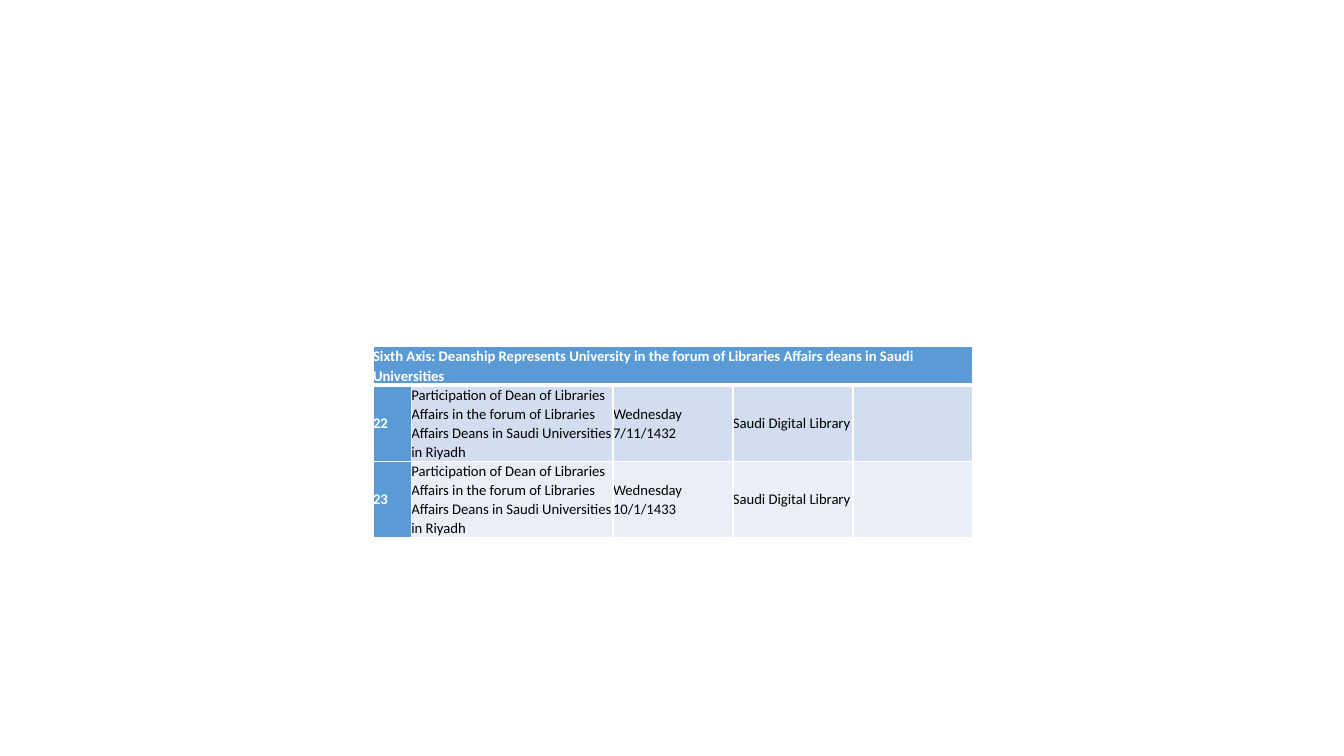
from lxml import etree
from pptx import Presentation
from pptx import util as u
from pptx.dml.color import RGBColor
from pptx.enum import text
from pptx.oxml.ns import qn

WHITE, BLACK, BLUE = "FFFFFF", "000000", "5B9BD5"
BANDS = ["D2DEEF", "EAEFF7"]
TITLE = ("Sixth Axis: Deanship Represents University in the forum of "
         "Libraries Affairs deans in Saudi Universities")
EVENT = ("Participation of Dean of Libraries Affairs in the forum of "
         "Libraries Affairs Deans in Saudi Universities in Riyadh")
PLACE = "Saudi Digital Library"
ROWS = [
    ["22", EVENT, "Wednesday 7/11/1432", PLACE, ""],
    ["23", EVENT, "Wednesday 10/1/1433", PLACE, ""],
]
WIDTHS = [0.38, 2, 1.19, 1.19, 1.19]
HEIGHTS = [0.37, 0.74, 0.74]


def color(code):
    return RGBColor.from_string(code)


def edge(cell, base=1):
    """Draw white borders; base is the width of the bottom one in points."""
    props = cell._tc.get_or_add_tcPr()
    for spot, side in enumerate("LRTB"):
        size = base if side == "B" else 1
        line = etree.Element(qn(f"a:ln{side}"), w=str(u.Pt(size)))
        fill = etree.SubElement(line, qn("a:solidFill"))
        etree.SubElement(fill, qn("a:srgbClr"), val=WHITE)
        props.insert(spot, line)


def write(cell, words, fill, ink, bold):
    cell.fill.solid()
    cell.fill.fore_color.rgb = color(fill)
    if not words:
        return
    cell.vertical_anchor = text.MSO_ANCHOR.MIDDLE
    cell.margin_left = cell.margin_right = 0
    cell.margin_top = cell.margin_bottom = 0
    para = cell.text_frame.paragraphs[0]
    para.line_spacing = 1.07
    para.space_after = u.Pt(8)
    run = para.add_run()
    run.text = words
    run.font.name = "Calibri"
    run.font.size = u.Pt(10.5)
    run.font.bold = bold
    run.font.color.rgb = color(ink)


def agenda(slide, left, top, width, height):
    frame = slide.shapes.add_table(
        len(HEIGHTS), len(WIDTHS), u.Inches(left), u.Inches(top),
        u.Inches(width), u.Inches(height))
    table = frame.table
    for col, size in zip(table.columns, WIDTHS):
        col.width = u.Inches(width * size / sum(WIDTHS))
    for row, size in zip(table.rows, HEIGHTS):
        row.height = u.Inches(height * size / sum(HEIGHTS))

    # Heading across all columns
    head = table.cell(0, 0)
    head.merge(table.cell(0, len(WIDTHS) - 1))
    write(head, TITLE, BLUE, WHITE, True)
    for col in range(len(WIDTHS)):
        edge(table.cell(0, col), 3)

    # Numbered events in banded rows
    for r, (items, band) in enumerate(zip(ROWS, BANDS), 1):
        for c, words in enumerate(items):
            cell = table.cell(r, c)
            first = c == 0
            write(cell, words, BLUE if first else band,
                  WHITE if first else BLACK, first)
            edge(cell)


def main():
    deck = Presentation()
    deck.slide_width = u.Inches(13.33)
    deck.slide_height = u.Inches(7.5)
    slide = deck.slides.add_slide(deck.slide_layouts[6])
    agenda(slide, 3.7, 3.44, 5.95, 1.85)
    deck.save("out.pptx")


if __name__ == "__main__":
    main()
